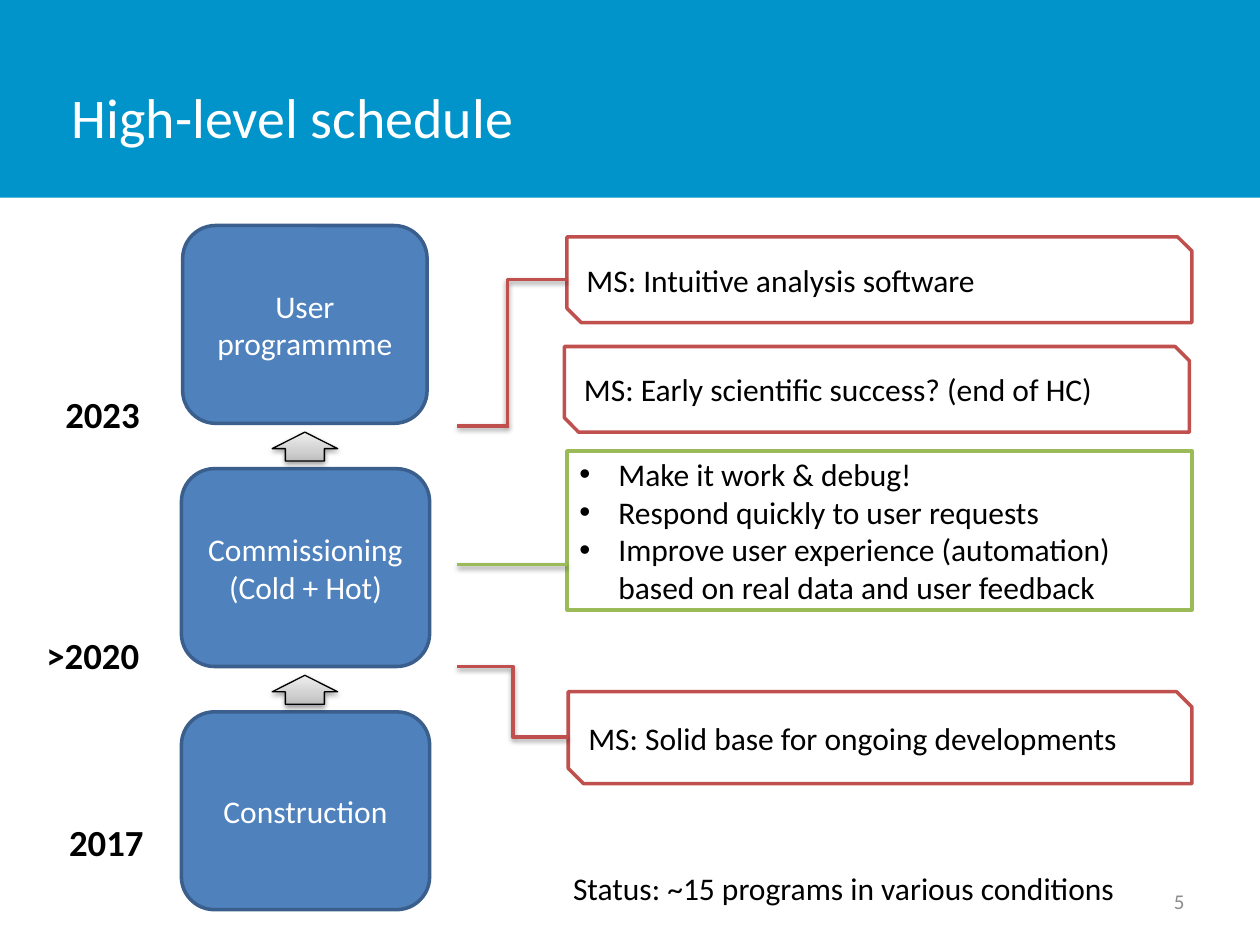
from copy import deepcopy
from dataclasses import dataclass

from lxml.etree import SubElement
from pptx import Presentation
from pptx.dml.color import RGBColor as RGB
from pptx.enum.shapes import MSO_CONNECTOR as Link, MSO_SHAPE as Shape
from pptx.enum.text import MSO_ANCHOR as Anchor, PP_ALIGN as Align
from pptx.oxml.ns import qn
from pptx.util import Inches, Pt


@dataclass(frozen=True)
class Theme:
    font: str = "Calibri"
    banner: str = "0094CA"
    white: str = "FFFFFF"
    black: str = "000000"
    page: str = "8C8C8C"
    phase: str = "4F81BD"
    phase_edge: str = "3A5F8C"
    milestone: str = "C0504D"
    work: str = "9BBB59"
    arrow_stops: tuple = ((0, "BDBDBD"), (0.35, "D1D1D1"), (1, "EEEEEE"))
    title_size: int = 32
    year_size: int = 21
    body_size: int = 18
    page_size: int = 12
    edge: float = 2
    arrow_edge: float = 0.75


@dataclass(frozen=True)
class Area:
    left: float
    top: float
    width: float
    height: float

    def emu(self) -> tuple:
        return tuple(Inches(v) for v in (self.left, self.top, self.width, self.height))


@dataclass(frozen=True)
class Label:
    words: str
    area: Area
    size: int
    color: str = Theme.black
    bold: bool = False
    wrap: bool = False
    anchor: Anchor = Anchor.TOP
    align: Align = Align.LEFT


@dataclass(frozen=True)
class Box:
    lines: tuple
    area: Area
    kind: Shape
    fill: str
    edge: str
    color: str = Theme.black
    align: Align = Align.LEFT
    bulleted: bool = False


@dataclass(frozen=True)
class Branch:
    kind: Link
    begin: tuple
    end: tuple
    color: str
    single_bend: bool = False


THEME = Theme()
PHASE_PITCH = 1.93


def write(paragraph, words: str, size: int, color: str, bold: bool = False) -> None:
    run = paragraph.add_run()
    run.text = words
    run.font.name = THEME.font
    run.font.size = Pt(size)
    run.font.bold = bold
    run.font.color.rgb = RGB.from_string(color)


def add_bullet(paragraph) -> None:
    props = paragraph._p.get_or_add_pPr()
    props.set("marL", str(Inches(0.31)))
    props.set("indent", str(Inches(-0.31)))
    SubElement(props, qn("a:buFont")).set("typeface", "Arial")
    SubElement(props, qn("a:buChar")).set("char", "•")


def add_shadow(shape) -> None:
    props = shape._element.spPr
    for effects in props.findall(qn("a:effectLst")):
        props.remove(effects)
    effects = SubElement(props, qn("a:effectLst"))
    shadow = SubElement(effects, qn("a:outerShdw"), blurRad=str(Pt(3.1)),
                        dist=str(Pt(1.6)), dir="5400000", rotWithShape="0")
    tint = SubElement(shadow, qn("a:srgbClr"), val=THEME.black)
    SubElement(tint, qn("a:alpha"), val="38000")


def draw_banner(slide) -> None:
    banner = slide.shapes.add_shape(Shape.RECTANGLE, *Area(0, 0, 10, 1.57).emu())
    banner.shadow.inherit = False
    banner.fill.solid()
    banner.fill.fore_color.rgb = RGB.from_string(THEME.banner)
    banner.line.fill.background()


def draw_label(slide, label: Label) -> None:
    frame = slide.shapes.add_textbox(*label.area.emu()).text_frame
    frame.word_wrap = label.wrap
    frame.vertical_anchor = label.anchor
    paragraph = frame.paragraphs[0]
    paragraph.alignment = label.align
    write(paragraph, label.words, label.size, label.color, label.bold)


def draw_box(slide, box: Box) -> None:
    shape = slide.shapes.add_shape(box.kind, *box.area.emu())
    shape.shadow.inherit = False
    shape.fill.solid()
    shape.fill.fore_color.rgb = RGB.from_string(box.fill)
    shape.line.color.rgb = RGB.from_string(box.edge)
    shape.line.width = Pt(THEME.edge)
    frame = shape.text_frame
    frame.word_wrap = True
    frame.vertical_anchor = Anchor.MIDDLE
    for index, words in enumerate(box.lines):
        paragraph = frame.add_paragraph() if index else frame.paragraphs[0]
        paragraph.alignment = box.align
        if box.bulleted:
            add_bullet(paragraph)
        write(paragraph, words, THEME.body_size, box.color)


def draw_arrow(slide, area: Area) -> None:
    arrow = slide.shapes.add_shape(Shape.UP_ARROW, *area.emu())
    arrow.adjustments[0] = 0.595
    arrow.adjustments[1] = 0.571
    arrow.fill.gradient()
    arrow.fill.gradient_angle = 90
    stops = arrow._element.spPr.find(".//" + qn("a:gsLst"))
    stops.append(deepcopy(stops[0]))
    for stop, (position, color) in zip(arrow.fill.gradient_stops, THEME.arrow_stops):
        stop.position = position
        stop.color.rgb = RGB.from_string(color)
    arrow.line.color.rgb = RGB.from_string(THEME.black)
    arrow.line.width = Pt(THEME.arrow_edge)
    add_shadow(arrow)


def draw_branch(slide, branch: Branch) -> None:
    ends = (Inches(v) for v in branch.begin + branch.end)
    line = slide.shapes.add_connector(branch.kind, *ends)
    line.line.color.rgb = RGB.from_string(branch.color)
    line.line.width = Pt(THEME.edge)
    if branch.single_bend:
        props = line._element.spPr
        props.find(qn("a:xfrm")).set("rot", "5400000")
        props.find(qn("a:prstGeom")).set("prst", "bentConnector2")
    add_shadow(line)


def phase(row: int, left: float, width: float, *lines: str) -> Box:
    area = Area(left, 1.79 + row * PHASE_PITCH, width, 1.57)
    return Box(lines, area, Shape.ROUNDED_RECTANGLE, THEME.phase, THEME.phase_edge,
               THEME.white, Align.CENTER)


def milestone(words: str, area: Area) -> Box:
    return Box((words,), area, Shape.SNIP_2_DIAG_RECTANGLE, THEME.white, THEME.milestone)


def year(words: str, left: float, top: float, width: float) -> Label:
    return Label(words, Area(left, top, width, 0.45), THEME.year_size, bold=True)


LABELS = (
    Label("High-level schedule", Area(0.47, 0.3, 7.81, 1.25), THEME.title_size,
          THEME.white, wrap=True, anchor=Anchor.MIDDLE),
    Label("5", Area(7.17, 6.95, 2.33, 0.4), THEME.page_size, THEME.page,
          wrap=True, anchor=Anchor.MIDDLE, align=Align.RIGHT),
    year("2023", 0.42, 3.06, 0.8),
    year(">2020", 0.27, 4.97, 0.95),
    year("2017", 0.45, 6.46, 0.8),
    Label("Status: ~15 programs in various conditions", Area(4.45, 6.85, 4.56, 0.4),
          THEME.body_size),
)
BOXES = (
    Box(("Make it work & debug!", "Respond quickly to user requests",
         "Improve user experience (automation) based on real data and user feedback"),
        Area(4.5, 3.58, 4.96, 1.26), Shape.FLOWCHART_PROCESS, THEME.white, THEME.work,
        bulleted=True),
    phase(0, 1.45, 1.94, "User programmme"),
    phase(1, 1.44, 1.97, "Commissioning", "(Cold + Hot)"),
    phase(2, 1.44, 1.97, "Construction"),
    milestone("MS: Solid base for ongoing developments", Area(4.51, 5.49, 4.95, 0.73)),
    milestone("MS: Early scientific success? (end of HC)", Area(4.48, 2.75, 4.96, 0.68)),
    milestone("MS: Intuitive analysis software", Area(4.5, 1.88, 4.96, 0.68)),
)
BRANCHES = (
    Branch(Link.STRAIGHT, (4.5, 4.48), (3.63, 4.48), THEME.work),
    Branch(Link.ELBOW, (3.63, 5.29), (4.51, 5.85), THEME.milestone),
    Branch(Link.ELBOW, (4.84, 3.03), (3.69, 2.56), THEME.milestone, single_bend=True),
    Branch(Link.STRAIGHT, (3.63, 3.38), (4.04, 3.38), THEME.milestone),
)


def main() -> None:
    deck = Presentation()
    deck.slide_width, deck.slide_height = Inches(10), Inches(7.5)
    slide = deck.slides.add_slide(deck.slide_layouts[6])
    draw_banner(slide)
    for label in LABELS:
        draw_label(slide, label)
    for box in BOXES:
        draw_box(slide, box)
    for gap in range(2):
        draw_arrow(slide, Area(2.16, 3.43 + gap * PHASE_PITCH, 0.52, 0.23))
    for branch in BRANCHES:
        draw_branch(slide, branch)
    deck.save("out.pptx")


if __name__ == "__main__":
    main()
